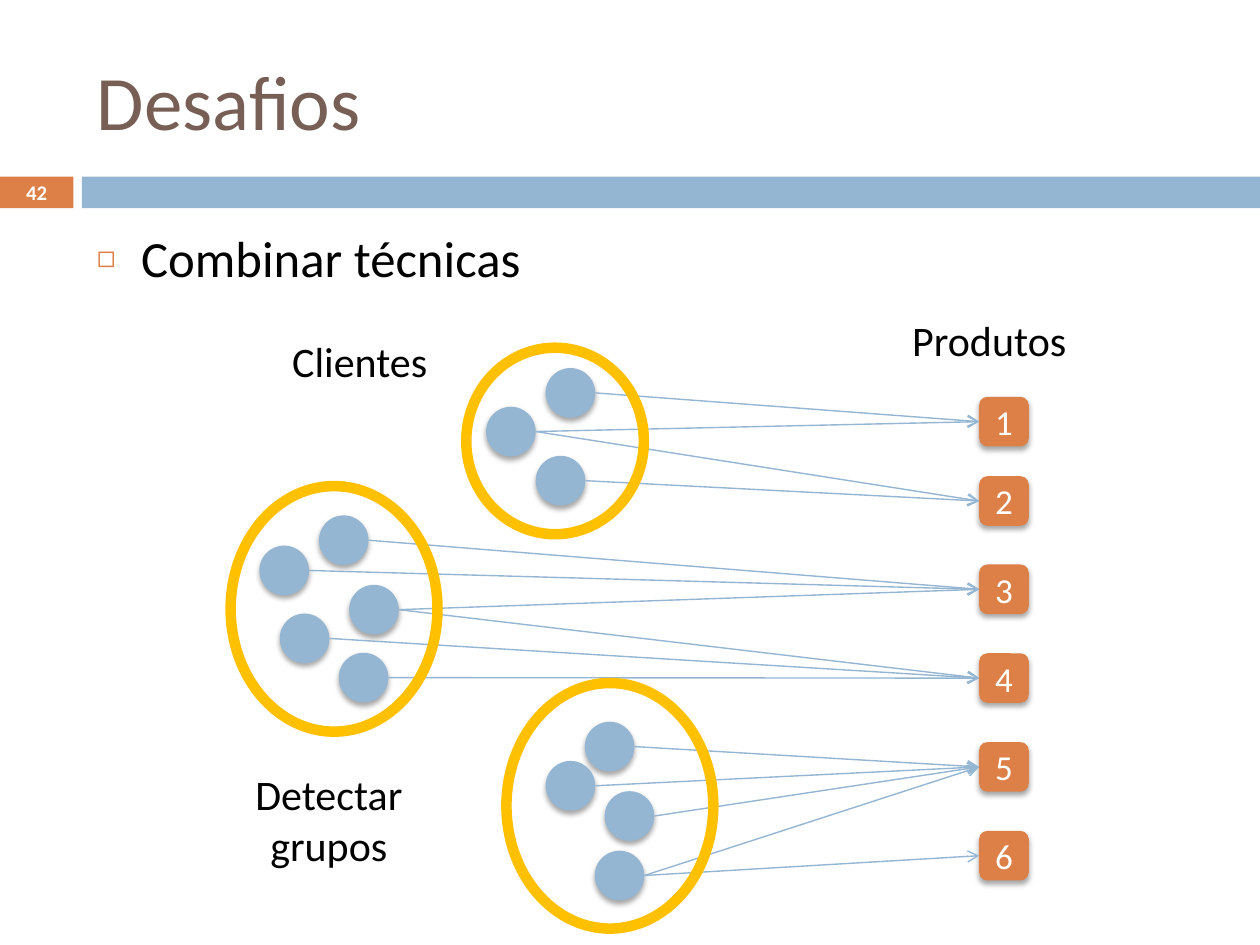
from lxml.etree import SubElement
from pptx import Presentation
from pptx.dml.color import RGBColor
from pptx.enum.shapes import MSO_CONNECTOR, MSO_SHAPE
from pptx.enum.text import MSO_ANCHOR, PP_ALIGN
from pptx.oxml.ns import qn
from pptx.util import Cm, Pt

BLUE, ORANGE, GOLD = "94B6D2", "DD8047", "FFC000"
BROWN, BLACK, WHITE = "775F55", "000000", "FFFFFF"


def color(code):
    return RGBColor.from_string(code)


def node(parent, tag, **attrs):
    """Add an XML child such as a:ln with its attributes."""
    return SubElement(parent, qn(tag), {k: str(v) for k, v in attrs.items()})


class Page:
    font = "Calibri"

    def __init__(self, slide):
        self.slide = slide
        self.shapes = slide.shapes

    def words(self, shape, text, size, code, align=PP_ALIGN.LEFT,
              anchor=MSO_ANCHOR.TOP, bold=False):
        """Put one styled run into the shape and return its paragraph."""
        frame = shape.text_frame
        frame.word_wrap = True
        frame.vertical_anchor = anchor
        para = frame.paragraphs[0]
        para.alignment = align
        run = para.add_run()
        run.text = text
        run.font.name = self.font
        run.font.size = Pt(size)
        run.font.bold = bold
        run.font.color.rgb = color(code)
        return para

    def place(self, shape, box):
        shape.left, shape.top, shape.width, shape.height = map(Cm, box)

    def title(self, text, box):
        shape = self.shapes.title
        self.place(shape, box)
        self.words(shape, text, 44, BROWN, anchor=MSO_ANCHOR.MIDDLE)

    def bullet(self, text, box):
        shape = self.slide.placeholders[1]
        self.place(shape, box)
        para = self.words(shape, text, 29, BLACK)
        para.space_before = Pt(7)
        props = para._p.get_or_add_pPr()
        props.set("marL", str(Cm(0.89)))
        props.set("indent", str(-Cm(0.89)))
        node(node(props, "a:buClr"), "a:srgbClr", val=ORANGE)
        node(props, "a:buSzPct", val=60000)
        node(props, "a:buChar", char="◻")

    def label(self, text, box, size=24, code=BLACK, **style):
        shape = self.shapes.add_textbox(*map(Cm, box))
        self.words(shape, text, size, code, **style)

    def block(self, kind, box, fill, shade=False):
        shape = self.shapes.add_shape(kind, *map(Cm, box))
        shape.shadow.inherit = False
        shape.fill.solid()
        shape.fill.fore_color.rgb = color(fill)
        shape.line.fill.background()
        if shade:
            effects = shape._element.spPr.find(qn("a:effectLst"))
            outer = node(effects, "a:outerShdw", blurRad=Pt(3), dist=Pt(2),
                         dir=5400000, rotWithShape=0)
            tint = node(outer, "a:srgbClr", val=BLACK)
            node(tint, "a:alpha", val=35000)
        return shape

    def product(self, text, left, top):
        shape = self.block(MSO_SHAPE.ROUNDED_RECTANGLE, (left, top, 1, 1),
                           ORANGE, shade=True)
        self.words(shape, text, 20, WHITE, PP_ALIGN.CENTER, MSO_ANCHOR.MIDDLE)
        shape.text_frame.margin_left = shape.text_frame.margin_right = 0
        return shape

    def ring(self, box):
        shape = self.shapes.add_shape(MSO_SHAPE.OVAL, *map(Cm, box))
        shape.shadow.inherit = False
        shape.fill.background()
        shape.line.color.rgb = color(GOLD)
        shape.line.width = Pt(6)

    def arrow(self, x, y, goal):
        """Draw an arrow from a point to the left side of goal."""
        line = self.shapes.add_connector(
            MSO_CONNECTOR.STRAIGHT, Cm(x), Cm(y), goal.left, goal.top)
        line.end_connect(goal, 1)
        line.line.color.rgb = color(BLUE)
        line.line.width = Pt(0.79)
        node(line._element.spPr.find(qn("a:ln")), "a:tailEnd", type="arrow")
        node(line._element.spPr, "a:effectLst")


# Each client: left, top, products bought
CLIENTS = [
    (11, 7.42, [1]), (9.8, 8.2, [1, 2]), (10.8, 9.19, [2]),
    (6.43, 10.39, [3]), (5.23, 11, [3]), (7.04, 11.79, [3, 4]),
    (5.64, 12.37, [4]), (6.83, 13.16, [4]),
    (11.79, 14.55, [5]), (11, 15.34, [5]), (12.19, 15.95, [5]),
    (11.99, 17.15, [5, 6]),
]
GROUPS = [(4.65, 9.8, 4.17, 4.95), (10.21, 13.77, 4.17, 4.95),
          (9.4, 7.01, 3.58, 3.76)]
TOPS = [8, 9.6] + [11.38 + 1.79 * i for i in range(4)]


def main():
    deck = Presentation()
    deck.slide_width, deck.slide_height = Cm(25.4), Cm(19.05)
    page = Page(deck.slides.add_slide(deck.slide_layouts[1]))

    page.block(MSO_SHAPE.RECTANGLE, (0, 3.56, 1.48, 0.64), ORANGE)
    page.block(MSO_SHAPE.RECTANGLE, (1.65, 3.56, 23.75, 0.64), BLUE)
    page.title("Desafios", (1.7, 0.64, 22.66, 2.74))
    page.bullet("Combinar técnicas", (1.7, 4.45, 22.66, 12.5))

    goals = [page.product(str(i), 19.74, top) for i, top in enumerate(TOPS, 1)]
    page.label("Clientes", (5.64, 6.63, 4.37, 1.27))
    page.label("Produtos", (18.14, 6.22, 4.57, 1.27))
    page.label("Detectar grupos", (4.24, 15.37, 4.78, 2.31),
               align=PP_ALIGN.CENTER)

    for left, top, _ in CLIENTS:
        page.block(MSO_SHAPE.OVAL, (left, top, 1, 1), BLUE, shade=True)
    for left, top, buys in CLIENTS:
        for item in buys:
            page.arrow(left + 1, top + 0.5, goals[item - 1])
    for box in GROUPS:
        page.ring(box)

    page.label("42", (0, 3.53, 1.48, 0.69), 11.9, WHITE, bold=True,
               align=PP_ALIGN.CENTER, anchor=MSO_ANCHOR.MIDDLE)
    deck.save("out.pptx")


if __name__ == "__main__":
    main()
